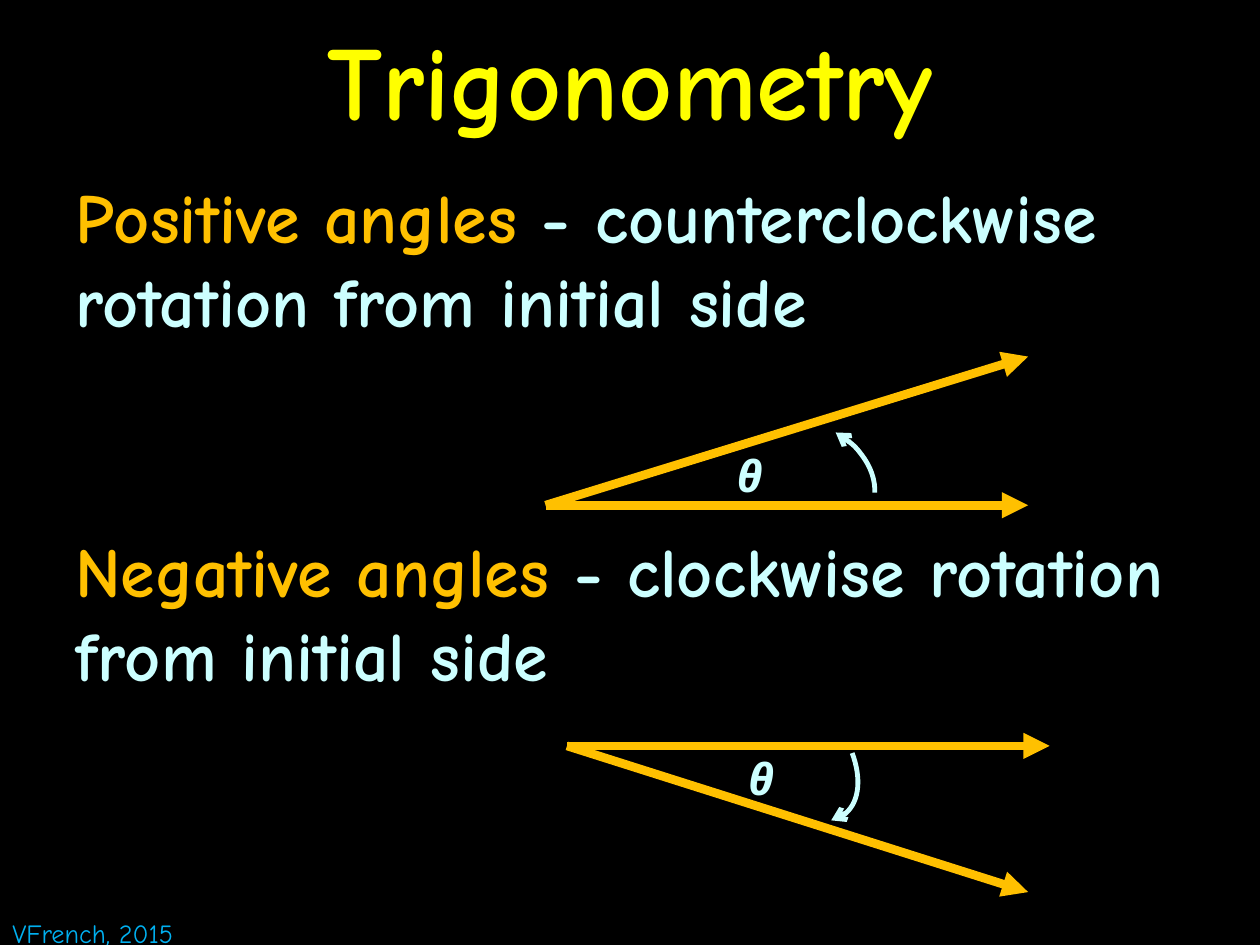
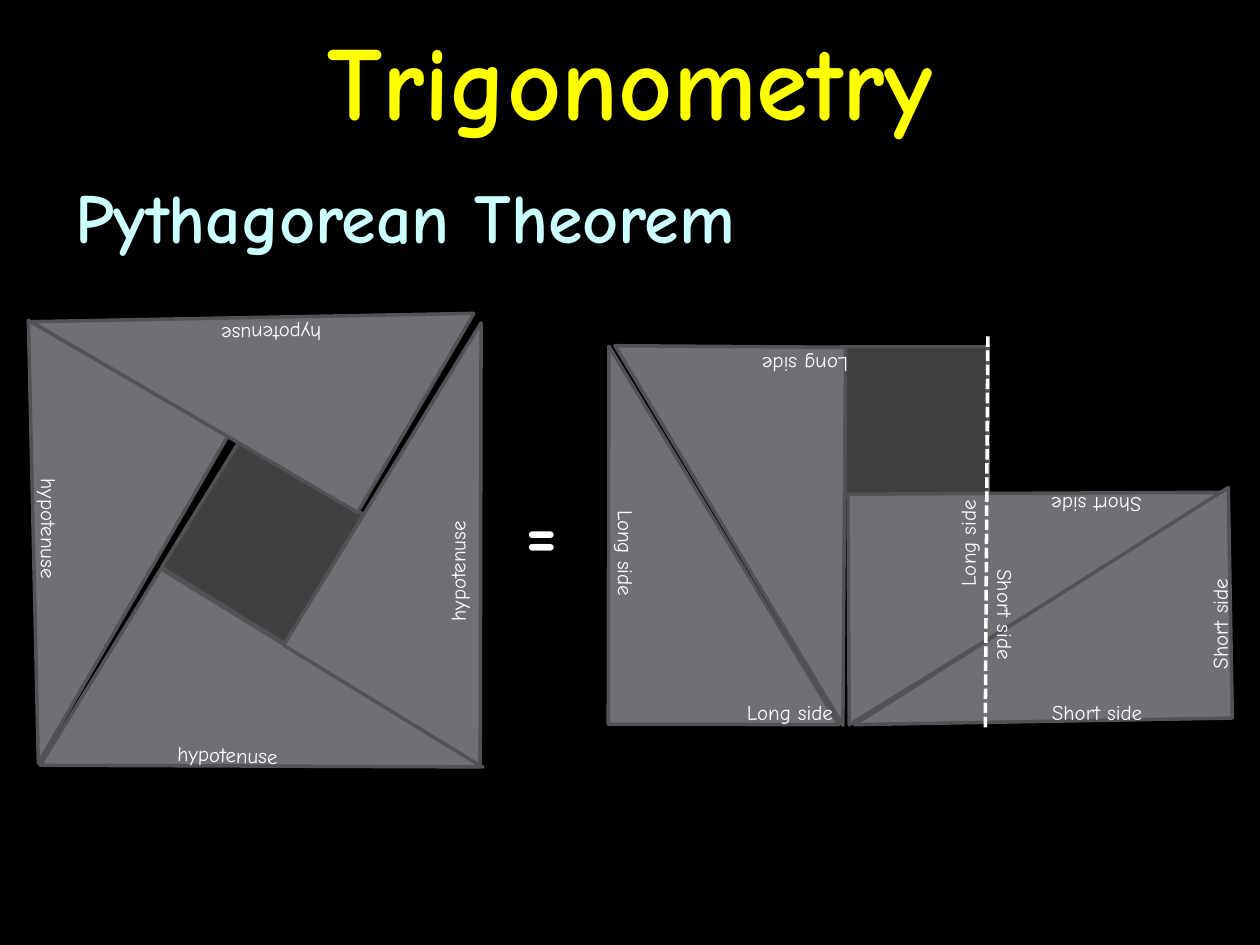
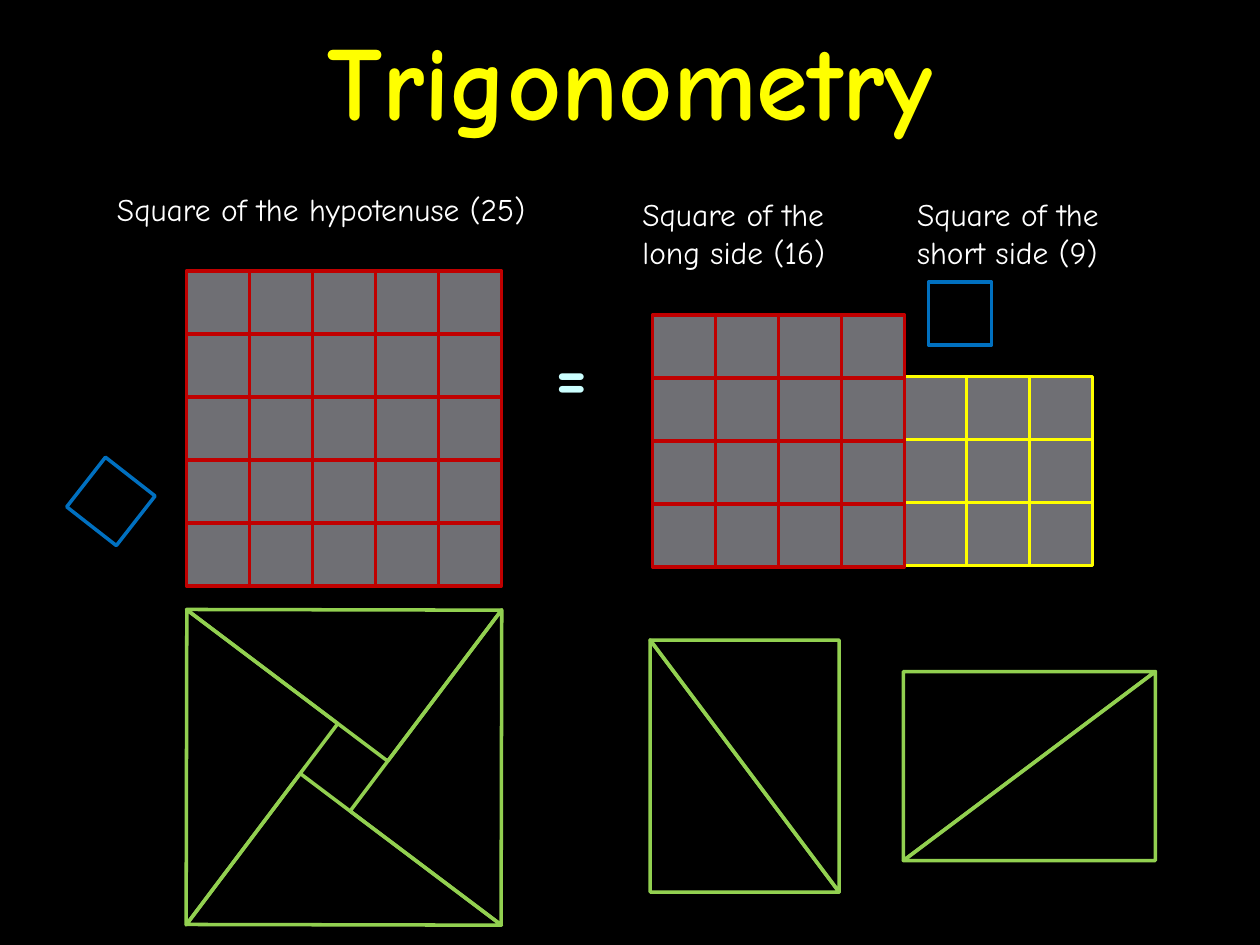
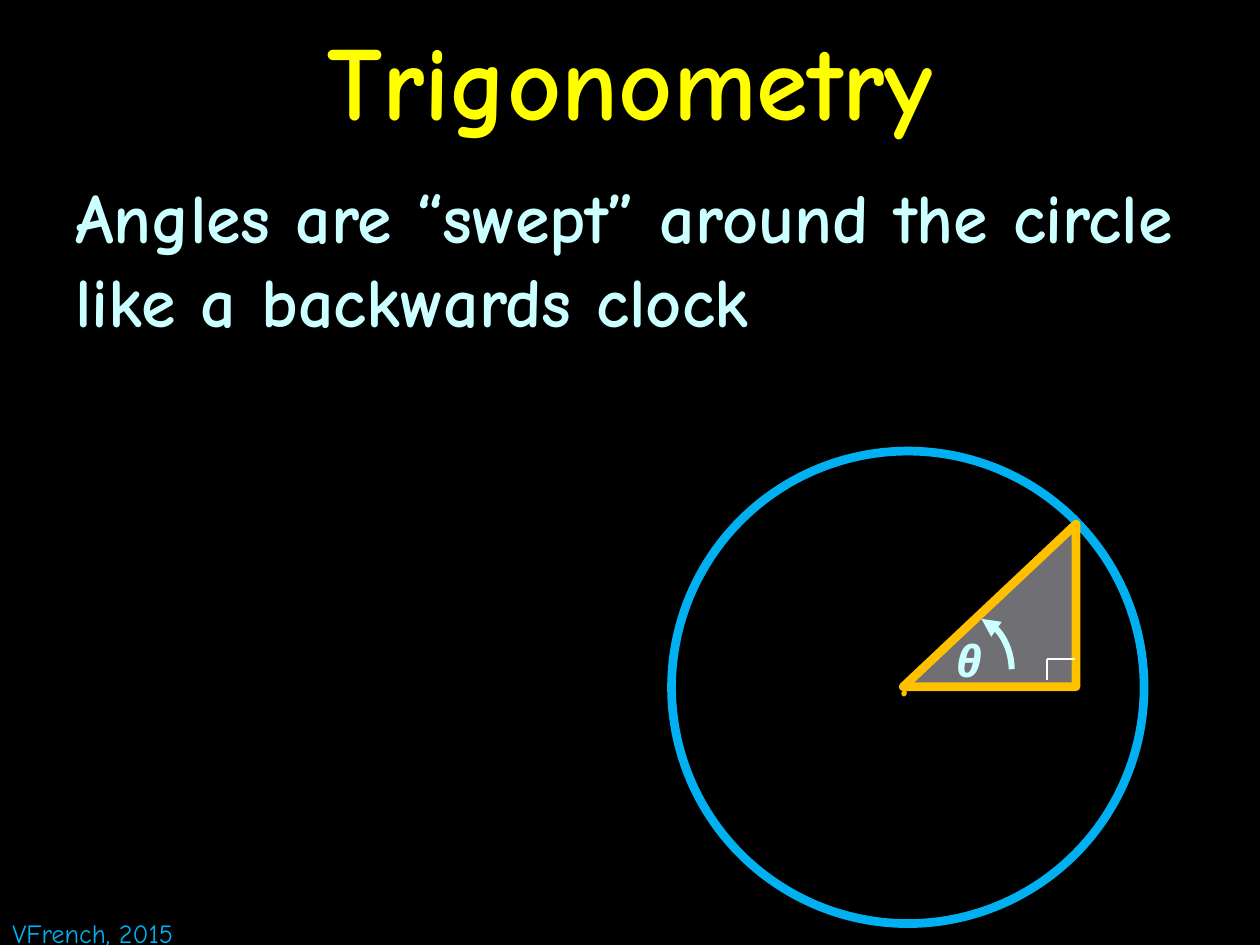
from typing import NamedTuple, Optional

from lxml.etree import SubElement
from pptx import Presentation
from pptx.dml.color import RGBColor
from pptx.enum.dml import MSO_LINE as Dash
from pptx.enum.shapes import MSO_CONNECTOR as Link, MSO_SHAPE as Kind
from pptx.enum.text import MSO_ANCHOR as Anchor, PP_ALIGN as Align
from pptx.oxml.ns import qn
from pptx.util import Inches, Pt

FONT = "Comic Neue"
BLACK = RGBColor(0x00, 0x00, 0x00)
WHITE = RGBColor(0xFF, 0xFF, 0xFF)
YELLOW = RGBColor(0xFF, 0xFF, 0x00)
GOLD = RGBColor(0xFF, 0xC0, 0x00)
ICE = RGBColor(0xCC, 0xFF, 0xFF)
SKY = RGBColor(0x00, 0xB0, 0xF0)
BLUE = RGBColor(0x00, 0x70, 0xC0)
RED = RGBColor(0xC0, 0x00, 0x00)
GREEN = RGBColor(0x92, 0xD0, 0x50)
GRAY = RGBColor(0x6F, 0x6F, 0x74)
DARK = RGBColor(0x40, 0x40, 0x40)
EDGE = RGBColor(0x52, 0x52, 0x56)

CELL = 0.5


class Box(NamedTuple):
    x: float
    y: float
    w: float
    h: float
    turn: float = 0


class Style(NamedTuple):
    size: float
    color: RGBColor
    bold: bool = False
    italic: bool = False


class Pen(NamedTuple):
    color: RGBColor
    width: float


class Spot(NamedTuple):
    """Top left corner and rotation of an item of fixed size."""
    x: float
    y: float
    turn: float = 0


class Wedge(NamedTuple):
    """A triangle of the pinwheel and the label on its hypotenuse."""
    tri: Spot
    label: Spot


class Grid(NamedTuple):
    x: float
    y: float
    count: int
    color: RGBColor


class Angle(NamedTuple):
    """A pair of rays from one point, with an arc and a theta between them."""
    start: tuple[float, float]
    ends: list[tuple[float, float]]
    arc: Box
    sweep: tuple[float, float]
    flip: bool
    theta: Box


HEAD = Style(60, YELLOW, bold=True)
MAIN = Style(40, ICE, bold=True)
TERM = Style(40, GOLD, bold=True)
THETA = Style(25, ICE, bold=True, italic=True)
NOTE = Style(18, WHITE)
TAG = Style(12, WHITE)
BODY = Box(0.5, 1.33, 9, 6.17)
RAY = Pen(GOLD, 5)
SEAM = Pen(EDGE, 2)
LEAF = Pen(GREEN, 2)

ANGLES = [
    Angle((4.33, 4.01), [(8.16, 4.01), (8.16, 2.83)],
          Box(5.89, 3.38, 1.08, 0.83, 29.2), (162, 206.03), False,
          Box(5.75, 3.51, 0.42, 0.52)),
    Angle((4.5, 5.92), [(8.33, 5.92), (8.16, 7.08)],
          Box(5.54, 5.5, 1.42, 0.83, 229.5), (209.83, 25.6), True,
          Box(5.84, 5.92, 0.42, 0.52)),
]

WEDGES = [
    Wedge(Spot(1.16, 4.58, 121.6), Spot(1.31, 5.84, 1.7)),
    Wedge(Spot(2.9, 2.82, 31.5), Spot(3.09, 4.34, 269.8)),
    Wedge(Spot(-0.65, 2.8, 210.1), Spot(-0.15, 4.09, 90.1)),
    Wedge(Spot(1.09, 1.02, 300.3), Spot(1.57, 2.51, 179.8)),
]

HALVES = [Spot(7.32, 3.33, 89.7), Spot(7.35, 3.31, 269),
          Spot(4.83, 2.75, 0.1), Spot(4.87, 2.75, 180.4)]

SIDES = {
    "Short side": [Spot(7.44, 4.81, 90), Spot(9.14, 4.72, 270),
                   Spot(8.25, 5.5), Spot(8.08, 3.86, 180)],
    "Long side": [Spot(4.43, 4.34, 90), Spot(7.14, 4.06, 270),
                  Spot(5.75, 2.75, 180), Spot(5.83, 5.5)],
}

GRIDS = [Grid(1.48, 2.15, 5, RED), Grid(7.17, 2.99, 3, YELLOW),
         Grid(5.18, 2.5, 4, RED)]


def place(box: Box) -> list[int]:
    return [Inches(n) for n in box[:4]]


def add_text(slide, box: Box, *paras: list[tuple[str, Style]],
             wrap: bool = True, gap: float = 0):
    """Add a text box; gap is the space in points between paragraphs."""
    shape = slide.shapes.add_textbox(*place(box))
    shape.rotation = box.turn
    frame = shape.text_frame
    frame.word_wrap = wrap
    for i, runs in enumerate(paras):
        para = frame.add_paragraph() if i else frame.paragraphs[0]
        if i and gap:
            para.space_before = Pt(gap)
        for text, style in runs:
            run = para.add_run()
            run.text = text
            font = run.font
            font.name = FONT
            font.size = Pt(style.size)
            font.bold = style.bold
            font.italic = style.italic
            font.color.rgb = style.color
    return frame


def set_tip(shape, end: str, tip: str) -> None:
    """Put an arrowhead on headEnd or tailEnd of an outline."""
    line = shape.element.spPr.find(qn("a:ln"))
    SubElement(line, qn("a:" + end)).set("type", tip)


def add_form(slide, kind: Kind, box: Box, pen: Pen,
             fill: Optional[RGBColor] = None, flip: bool = False):
    shape = slide.shapes.add_shape(kind, *place(box))
    shape.shadow.inherit = False
    shape.rotation = box.turn
    if fill is None:
        shape.fill.background()
    else:
        shape.fill.solid()
        shape.fill.fore_color.rgb = fill
    shape.line.color.rgb = pen.color
    shape.line.width = Pt(pen.width)
    if flip:
        shape.element.spPr.find(qn("a:xfrm")).set("flipH", "1")
    return shape


def add_arc(slide, box: Box, sweep: tuple[float, float], pen: Pen,
            tip: str, flip: bool = False) -> None:
    arc = add_form(slide, Kind.ARC, box, pen, flip=flip)
    for i, value in enumerate(sweep):
        arc.adjustments[i] = value
    set_tip(arc, "headEnd", tip)


def add_line(slide, start: tuple[float, float], end: tuple[float, float],
             pen: Pen):
    line = slide.shapes.add_connector(
        Link.STRAIGHT, *(Inches(n) for n in (*start, *end)))
    line.line.color.rgb = pen.color
    line.line.width = Pt(pen.width)
    SubElement(line.element.spPr, qn("a:effectLst"))
    return line


def add_angle(slide, angle: Angle) -> None:
    for end in angle.ends:
        set_tip(add_line(slide, angle.start, end, RAY), "tailEnd", "triangle")
    add_arc(slide, angle.arc, angle.sweep, Pen(ICE, 2.75), "arrow", angle.flip)
    add_text(slide, angle.theta, [("θ", THETA)], wrap=False)


def add_tag(slide, text: str, spot: Spot) -> None:
    add_text(slide, Box(spot.x, spot.y, 1.08, 0.3, spot.turn), [(text, TAG)])


def add_tri(slide, spot: Spot, w: float, h: float, pen: Pen,
            fill: Optional[RGBColor] = None) -> None:
    add_form(slide, Kind.RIGHT_TRIANGLE,
             Box(spot.x, spot.y, w, h, spot.turn), pen, fill)


def add_grid(slide, grid: Grid) -> None:
    for row in range(grid.count):
        for col in range(grid.count):
            box = Box(grid.x + col * CELL, grid.y + row * CELL, CELL, CELL)
            add_form(slide, Kind.RECTANGLE, box, Pen(grid.color, 2), GRAY)


def add_slide(deck):
    """Add a black slide with the shared title."""
    slide = deck.slides.add_slide(deck.slide_layouts[6])
    fill = slide.background.fill
    fill.solid()
    fill.fore_color.rgb = BLACK
    frame = add_text(slide, Box(0, 0, 10, 1.25), [("Trigonometry", HEAD)])
    frame.vertical_anchor = Anchor.MIDDLE
    frame.paragraphs[0].alignment = Align.CENTER
    return slide


def add_foot(slide) -> None:
    add_text(slide, Box(0, 7.23, 1.69, 0.35),
             [("VFrench, 2015", Style(15, SKY))], wrap=False)


def draw_signs(deck) -> None:
    slide = add_slide(deck)
    add_text(slide, BODY._replace(w=9.5),
             [("Positive angles ", TERM),
              ("- counterclockwise rotation from initial side", MAIN)],
             [("Negative angles ", TERM),
              ("- clockwise rotation from initial side", MAIN)],
             gap=106)
    for angle in ANGLES:
        add_angle(slide, angle)
    add_foot(slide)


def draw_proof(deck) -> None:
    slide = add_slide(deck)
    add_text(slide, BODY, [("Pythagorean Theorem", MAIN)])
    add_form(slide, Kind.RECTANGLE, Box(1.51, 3.7, 1.17, 1.2, 31.7), SEAM, DARK)
    for wedge in WEDGES:
        add_tri(slide, wedge.tri, 1.83, 3, SEAM, GRAY)
        add_tag(slide, "hypotenuse", wedge.label)
    add_form(slide, Kind.RECTANGLE, Box(6.67, 2.75, 1.17, 1.2), SEAM, DARK)
    for spot in HALVES:
        add_tri(slide, spot, 1.83, 3, SEAM, GRAY)
    split = add_line(slide, (7.84, 2.67), (7.82, 5.79), Pen(WHITE, 2))
    split.line.dash_style = Dash.SQUARE_DOT
    for text, spots in SIDES.items():
        for spot in spots:
            add_tag(slide, text, spot)
    add_text(slide, Box(4.07, 3.83, 0.68, 0.77),
             [("=", MAIN._replace(color=WHITE))])


def draw_count(deck) -> None:
    slide = add_slide(deck)
    for grid in GRIDS:
        add_grid(slide, grid)
    add_text(slide, Box(0.83, 1.46, 3.86, 0.4),
             [("Square of the hypotenuse (25)", NOTE)])
    for x, side in ((7.18, "short side (9)"), (5, "long side (16)")):
        add_text(slide, Box(x, 1.5, 1.94, 0.71),
                 [("Square of the", NOTE)], [(side, NOTE)])
    add_text(slide, Box(4.31, 2.57, 0.67, 0.71), [("=", MAIN)])

    # Pinwheel: one triangle per side, each a quarter turn on from the last
    w, h, reach = 1.5, 2, 1.25
    left, top = 2.73 - w / 2, 6.09 - h / 2
    ways = [(1, 0), (0, 1), (-1, 0), (0, -1)]
    for i, (dx, dy) in enumerate(ways):
        spot = Spot(left + dx * reach, top + dy * reach, 37 + 90 * i)
        add_tri(slide, spot, w, h, LEAF)
    for x, turn in ((5.16, 0), (7.42, 90)):
        for half in (0, 180):
            add_tri(slide, Spot(x, 5.08, turn + half), w, h, LEAF)
    for box in (Box(0.63, 3.73, CELL, CELL, 38), Box(7.37, 2.24, CELL, CELL)):
        add_form(slide, Kind.RECTANGLE, box, Pen(BLUE, 2))


def draw_sweep(deck) -> None:
    slide = add_slide(deck)
    add_text(slide, BODY, [
        ("Angles are “swept” around the circle like a backwards clock", MAIN)])
    add_form(slide, Kind.OVAL, Box(5.33, 3.58, 3.75, 3.75), Pen(SKY, 5))
    add_text(slide, Box(7.04, 4.92, 0.34, 0.77), [(".", Style(40, GOLD))],
             wrap=False)
    add_form(slide, Kind.RIGHT_TRIANGLE, Box(7.17, 4.16, 1.37, 1.29), RAY,
             GRAY, flip=True)
    corner = (8.31, 5.23)
    for end in ((8.53, 5.23), (8.31, 5.4)):
        add_line(slide, corner, end, Pen(WHITE, 0.75))
    add_text(slide, Box(7.49, 4.98, 0.5, 0.52), [("θ", THETA)])
    add_arc(slide, Box(7.33, 4.89, 0.7, 0.86), (171.07, 215.22),
            Pen(ICE, 3.5), "triangle")
    add_foot(slide)


def main() -> None:
    deck = Presentation()
    deck.slide_width = Inches(10)
    deck.slide_height = Inches(7.5)
    for draw in (draw_signs, draw_proof, draw_count, draw_sweep):
        draw(deck)
    deck.save("out.pptx")


if __name__ == "__main__":
    main()
